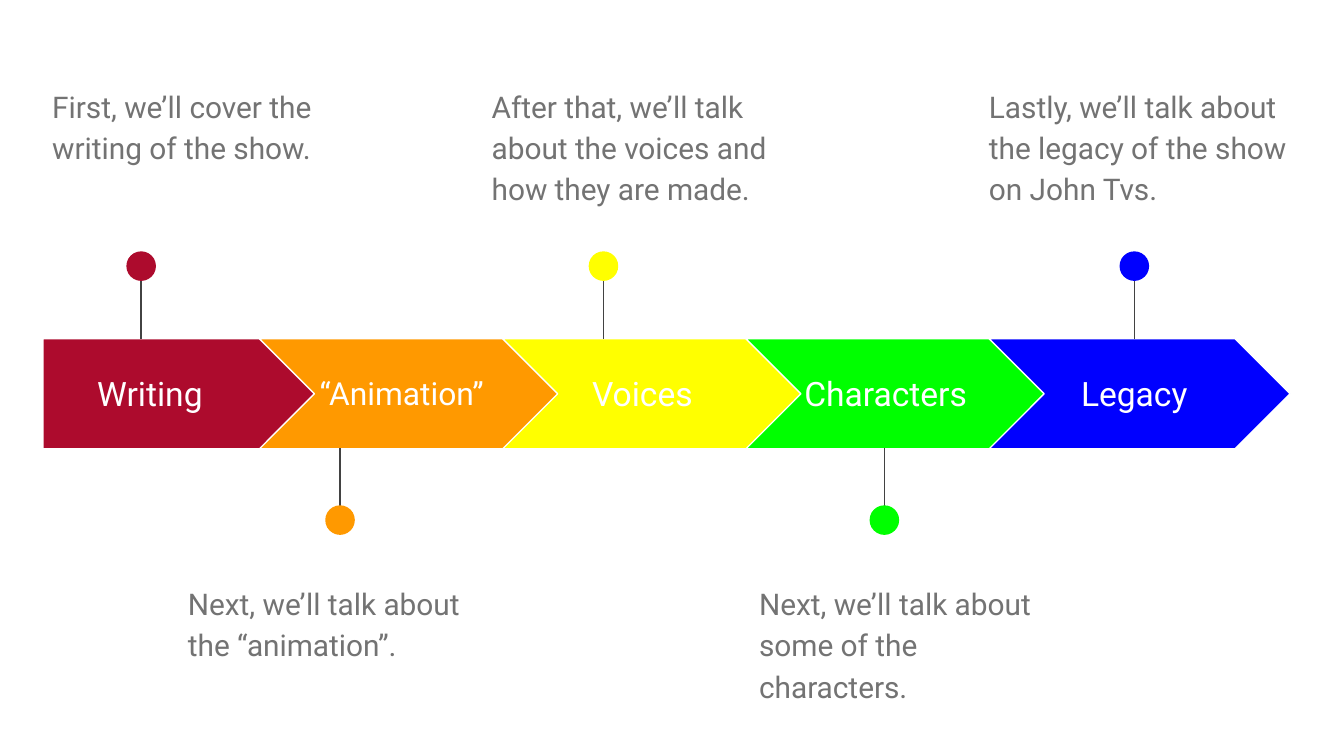
from lxml import etree
from pptx import Presentation
from pptx.dml.color import RGBColor
from pptx.enum.shapes import MSO_CONNECTOR, MSO_SHAPE
from pptx.enum.text import MSO_ANCHOR, PP_ALIGN
from pptx.oxml.ns import qn
from pptx.util import Inches, Pt

PENTAGON, CHEVRON, OVAL = MSO_SHAPE.PENTAGON, MSO_SHAPE.CHEVRON, MSO_SHAPE.OVAL
STRAIGHT = MSO_CONNECTOR.STRAIGHT
TOP, MIDDLE = MSO_ANCHOR.TOP, MSO_ANCHOR.MIDDLE
LEFT, CENTER = PP_ALIGN.LEFT, PP_ALIGN.CENTER

THEME = {
    "font": "Roboto",
    "white": RGBColor(0xFF, 0xFF, 0xFF),
    "note": RGBColor(0x73, 0x73, 0x73),
    "pin": RGBColor(0x42, 0x42, 0x42),
    "steps": ["AD0B2D", "FF9900", "FFFF00", "00FF00", "0000FF"],
    "label_size": 18,
    "small_label_size": 17,
    "note_size": 16,
    "line_width": 0.75,
}

# Label, label left, label size, pin centre, note left, note
STEPS = [
    ("Writing", 0.32, THEME["label_size"], 1.05, 0.29,
     "First, we’ll cover the writing of the show."),
    ("“Animation”", 2.27, THEME["small_label_size"], 2.53, 1.3,
     "Next, we’ll talk about the “animation”."),
    ("Voices", 4.06, THEME["label_size"], 4.49, 3.56,
     "After that, we’ll talk about the voices and how they are made."),
    ("Characters", 5.87, THEME["label_size"], 6.58, 5.55,
     "Next, we’ll talk about some of the characters."),
    ("Legacy", 7.72, THEME["label_size"], 8.44, 7.26,
     "Lastly, we’ll talk about the legacy of the show on John Tvs."),
]

BAND_TOP, BAND_HEIGHT = 2.52, 0.82
FIRST_LEFT, FIRST_WIDTH = 0.32, 2.05
CHEVRON_LEFT, CHEVRON_WIDTH, CHEVRON_PITCH = 1.93, 2.24, 1.81
PIN_LENGTH, DOT = 0.6, 0.22


def add_text(slide, text, left, top, width, height, *, size, color,
             align=LEFT, anchor=TOP, line_spacing=None, space_after=0):
    frame = slide.shapes.add_textbox(
        Inches(left), Inches(top), Inches(width), Inches(height)).text_frame
    frame.word_wrap = True
    frame.vertical_anchor = anchor
    frame.margin_left = frame.margin_right = Inches(0.1)
    frame.margin_top = frame.margin_bottom = Inches(0.1)
    paragraph = frame.paragraphs[0]
    paragraph.alignment = align
    paragraph.line_spacing = line_spacing
    paragraph.space_after = Pt(space_after)
    run = paragraph.add_run()
    run.text = text
    run.font.name = THEME["font"]
    run.font.size = Pt(size)
    run.font.color.rgb = color


def add_filled_shape(shapes, kind, left, top, width, height, color):
    shape = shapes.add_shape(
        kind, Inches(left), Inches(top), Inches(width), Inches(height))
    shape.shadow.inherit = False
    shape.fill.solid()
    shape.fill.fore_color.rgb = color
    shape.line.fill.background()
    return shape


presentation = Presentation()
presentation.slide_width = Inches(10)
presentation.slide_height = Inches(10 * 9 / 16)
slide = presentation.slides.add_slide(presentation.slide_layouts[6])

for index, (label, label_left, label_size, pin_x, note_left, note) in enumerate(STEPS):
    color = RGBColor.from_string(THEME["steps"][index])
    first = index == 0
    above = index % 2 == 0

    if first:
        kind, left, width = PENTAGON, FIRST_LEFT, FIRST_WIDTH
    else:
        kind, width = CHEVRON, CHEVRON_WIDTH
        left = CHEVRON_LEFT + (index - 1) * CHEVRON_PITCH
    arrow = add_filled_shape(
        slide.shapes, kind, left, BAND_TOP, width, BAND_HEIGHT, color)
    arrow.line.color.rgb = THEME["white"]
    arrow.line.width = Pt(THEME["line_width"])

    add_text(slide, label, label_left, 2.67, 1.59 if first else 1.44, 0.51,
             size=label_size, color=THEME["white"], align=CENTER, anchor=MIDDLE)

    if above:
        pin_end, dot_top, note_top = BAND_TOP, 1.87, 0.52
        pin_start = pin_end - PIN_LENGTH
    else:
        pin_end, dot_top, note_top = 3.33, 3.76, 4.22
        pin_start = pin_end + PIN_LENGTH
    pin = slide.shapes.add_group_shape()
    stem = pin.shapes.add_connector(
        STRAIGHT, Inches(pin_x), Inches(pin_start), Inches(pin_x), Inches(pin_end))
    stem.line.color.rgb = THEME["pin"]
    stem.line.width = Pt(THEME["line_width"])
    etree.SubElement(stem._element.spPr, qn("a:effectLst"))
    add_filled_shape(pin.shapes, OVAL, pin_x - DOT / 2, dot_top, DOT, DOT, color)

    add_text(slide, note, note_left, note_top, 2.45, 0.99,
             size=THEME["note_size"], color=THEME["note"],
             line_spacing=1.15, space_after=16)

presentation.save("out.pptx")
